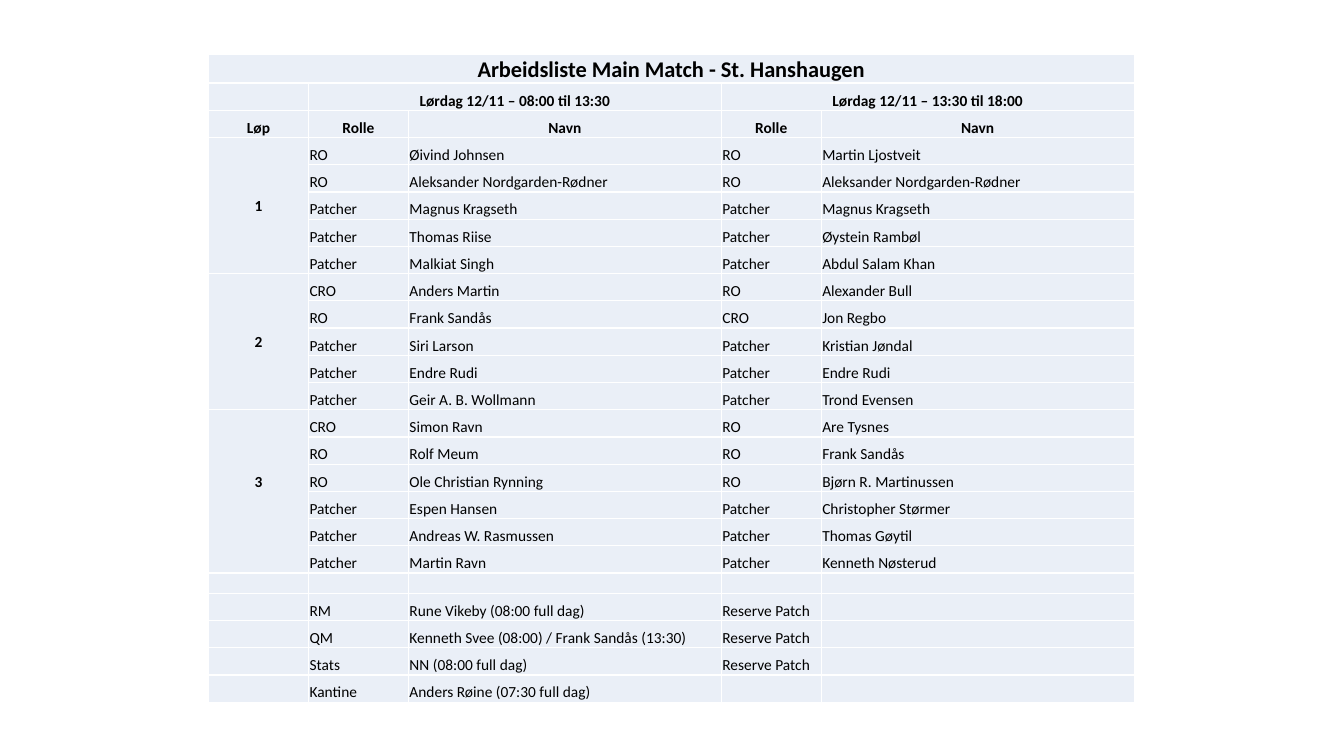
import dataclasses

import lxml.etree
import pptx
import pptx.dml.color
import pptx.enum.text
import pptx.oxml.ns
import pptx.util

Pt = pptx.util.Pt
Align = pptx.enum.text.PP_ALIGN
Anchor = pptx.enum.text.MSO_ANCHOR


@dataclasses.dataclass(frozen=True)
class Theme:
    """Hold the colours, type and cell measures of the duty list."""
    font: str = "Calibri"
    ink: str = "000000"
    fill: str = "EAEFF7"
    border: str = "FFFFFF"
    border_width: float = 1
    title_size: float = 16
    body_size: float = 11
    inset: float = 0.75
    row_height: float = 19.45
    spacer_height: float = 14.4


THEME = Theme()
COLUMN_WIDTHS = (71.4, 71.4, 223.5, 71.4, 223.5)
TITLE = "Arbeidsliste Main Match - St. Hanshaugen"
SHIFTS = ("Lørdag 12/11 – 08:00 til 13:30", "Lørdag 12/11 – 13:30 til 18:00")
HEADINGS = ("Løp", "Rolle", "Navn", "Rolle", "Navn")
STAGES = {
    "1": [
        ("RO", "Øivind Johnsen", "RO", "Martin Ljostveit"),
        ("RO", "Aleksander Nordgarden-Rødner", "RO", "Aleksander Nordgarden-Rødner"),
        ("Patcher", "Magnus Kragseth", "Patcher", "Magnus Kragseth"),
        ("Patcher", "Thomas Riise", "Patcher", "Øystein Rambøl"),
        ("Patcher", "Malkiat Singh", "Patcher", "Abdul Salam Khan"),
    ],
    "2": [
        ("CRO", "Anders Martin", "RO", "Alexander Bull"),
        ("RO", "Frank Sandås", "CRO", "Jon Regbo"),
        ("Patcher", "Siri Larson", "Patcher", "Kristian Jøndal"),
        ("Patcher", "Endre Rudi", "Patcher", "Endre Rudi"),
        ("Patcher", "Geir A. B. Wollmann", "Patcher", "Trond Evensen"),
    ],
    "3": [
        ("CRO", "Simon Ravn", "RO", "Are Tysnes"),
        ("RO", "Rolf Meum", "RO", "Frank Sandås"),
        ("RO", "Ole Christian Rynning", "RO", "Bjørn R. Martinussen"),
        ("Patcher", "Espen Hansen", "Patcher", "Christopher Størmer"),
        ("Patcher", "Andreas W. Rasmussen", "Patcher", "Thomas Gøytil"),
        ("Patcher", "Martin Ravn", "Patcher", "Kenneth Nøsterud"),
    ],
}
SUPPORT = [
    ("RM", "Rune Vikeby (08:00 full dag)", "Reserve Patch", ""),
    ("QM", "Kenneth Svee (08:00) / Frank Sandås (13:30)", "Reserve Patch", ""),
    ("Stats", "NN (08:00 full dag)", "Reserve Patch", ""),
    ("Kantine", "Anders Røine (07:30 full dag)", "", ""),
]


def duty_rows():
    """Return every table row as five strings, and the merged ranges."""
    rows = [
        (TITLE, "", "", "", ""),
        ("", SHIFTS[0], "", SHIFTS[1], ""),
        HEADINGS,
    ]
    merges = [(0, 0, 0, 4), (1, 1, 1, 2), (1, 3, 1, 4)]
    for stage, crew in STAGES.items():
        first = len(rows)
        rows += [(stage if index == 0 else "", *duty) for index, duty in enumerate(crew)]
        merges.append((first, 0, len(rows) - 1, 0))
    spacer = len(rows)
    rows.append(("",) * 5)
    rows += [("", *duty) for duty in SUPPORT]
    return rows, merges, spacer


def style_cell(cell):
    """Give a cell its insets, white borders and fill."""
    cell.margin_left = cell.margin_right = cell.margin_top = Pt(THEME.inset)
    cell.margin_bottom = 0
    properties = cell._tc.get_or_add_tcPr()
    qualified = pptx.oxml.ns.qn
    for side in ("lnL", "lnR", "lnT", "lnB"):
        line = lxml.etree.SubElement(
            properties, qualified("a:" + side), w=str(Pt(THEME.border_width)))
        paint = lxml.etree.SubElement(line, qualified("a:solidFill"))
        lxml.etree.SubElement(paint, qualified("a:srgbClr"), val=THEME.border)
    cell.fill.solid()
    cell.fill.fore_color.rgb = pptx.dml.color.RGBColor.from_string(THEME.fill)


def write_cell(cell, text, size, heading):
    """Write one run, bold and centred for a heading."""
    para = cell.text_frame.paragraphs[0]
    if not text:
        lxml.etree.SubElement(
            para._p, pptx.oxml.ns.qn("a:endParaRPr"), sz=str(int(size * 100)))
        return
    para.alignment = Align.CENTER if heading else Align.LEFT
    span = para.add_run()
    span.text = text
    span.font.name = THEME.font
    span.font.size = Pt(size)
    span.font.bold = heading
    span.font.color.rgb = pptx.dml.color.RGBColor.from_string(THEME.ink)


def add_duty_table(page, left, top):
    """Place the duty list with its top left corner at the given point."""
    rows, merges, spacer = duty_rows()
    heights = [THEME.row_height] * len(rows)
    heights[spacer] = THEME.spacer_height
    frame = page.shapes.add_table(
        len(rows), len(COLUMN_WIDTHS), Pt(left), Pt(top),
        Pt(sum(COLUMN_WIDTHS)), Pt(sum(heights)))
    table = frame.table
    table.first_row = table.horz_banding = False
    for column, width in zip(table.columns, COLUMN_WIDTHS):
        column.width = Pt(width)
    for row_index, texts in enumerate(rows):
        table.rows[row_index].height = Pt(heights[row_index])
        size = THEME.title_size if row_index == 0 else THEME.body_size
        for column_index, text in enumerate(texts):
            cell = table.cell(row_index, column_index)
            style_cell(cell)
            stage = text in STAGES
            cell.vertical_anchor = Anchor.MIDDLE if stage else Anchor.BOTTOM
            write_cell(cell, text, size, stage or row_index < 3)
    for first_row, first_column, last_row, last_column in merges:
        table.cell(first_row, first_column).merge(table.cell(last_row, last_column))
    last_stage = table.cell(spacer - len(STAGES["3"]), 0)
    last_stage.margin_bottom = Pt(13.4)


def main():
    """Build the one-page deck and save it."""
    deck = pptx.Presentation()
    deck.slide_width, deck.slide_height = Pt(960), Pt(540)
    page = deck.slides.add_slide(deck.slide_layouts[6])
    add_duty_table(page, left=149, top=39)
    deck.save("out.pptx")


if __name__ == "__main__":
    main()
